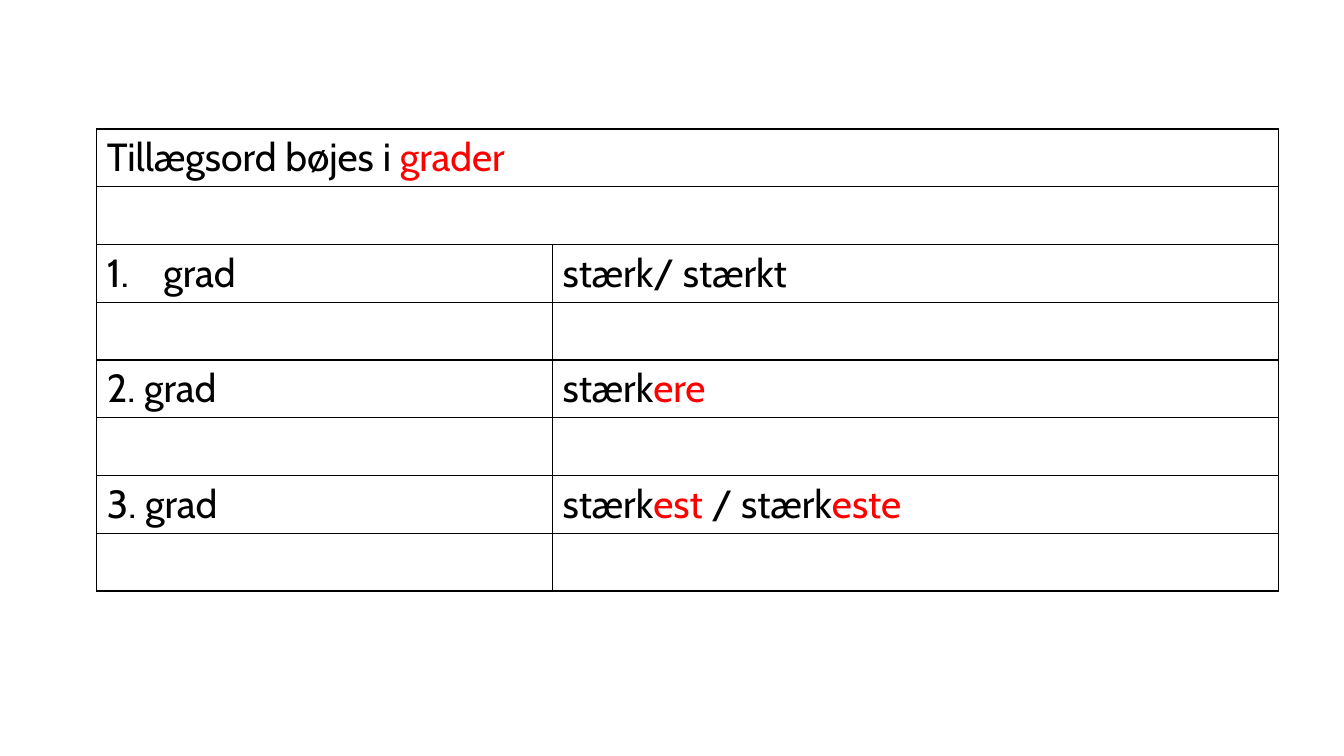
from dataclasses import dataclass

from lxml.etree import SubElement
from pptx import Presentation
from pptx.dml.color import RGBColor
from pptx.oxml.ns import qn
from pptx.util import Inches, Pt


@dataclass(frozen=True)
class Theme:
    font: str = "Cabin"
    size: int = 28
    text: str = "000000"
    ending: str = "FF0000"
    border: str = "000000"
    border_width: int = 1


THEME = Theme()
COLUMN_WIDTHS = (4.52, 7.2)
ROW_HEIGHT = 0.573
NUMBER_INDENT = 0.56

# Each cell is a list of text pieces; every second piece is highlighted.
ROWS = (
    (["Tillægsord bøjes i ", "grader"], []),
    ([], []),
    (["grad"], ["stærk/ stærkt"]),
    ([], []),
    (["2. grad"], ["stærk", "ere"]),
    ([], []),
    (["3. grad"], ["stærk", "est ", "/ stærk", "este"]),
    ([], []),
)
MERGED_ROWS = (0, 1)
NUMBERED_ROW = 2


def add_borders(cell):
    properties = cell._tc.get_or_add_tcPr()
    for side in ("a:lnL", "a:lnR", "a:lnT", "a:lnB"):
        line = SubElement(properties, qn(side), w=str(Pt(THEME.border_width)))
        fill = SubElement(line, qn("a:solidFill"))
        SubElement(fill, qn("a:srgbClr"), val=THEME.border)


def number_paragraph(paragraph):
    properties = paragraph._p.get_or_add_pPr()
    indent = Inches(NUMBER_INDENT)
    properties.set("marL", str(indent))
    properties.set("indent", str(-indent))
    SubElement(properties, qn("a:buFont"), typeface=THEME.font)
    SubElement(properties, qn("a:buAutoNum"), type="arabicPeriod")


def write_pieces(paragraph, pieces):
    """Write text runs that alternate between the text and ending colours."""
    for index, piece in enumerate(pieces):
        run = paragraph.add_run()
        run.text = piece
        formats = {"name": THEME.font, "size": Pt(THEME.size), "bold": False}
        for name, value in formats.items():
            setattr(run.font, name, value)
        color = THEME.ending if index % 2 else THEME.text
        run.font.color.rgb = RGBColor.from_string(color)


def add_degree_table(slide):
    table = slide.shapes.add_table(
        len(ROWS), len(COLUMN_WIDTHS), Inches(0.96), Inches(1.28),
        Inches(sum(COLUMN_WIDTHS)), Inches(ROW_HEIGHT * len(ROWS))).table
    table.first_row = False
    table.horz_banding = False
    for column, width in zip(table.columns, COLUMN_WIDTHS):
        column.width = Inches(width)
    for row, contents in zip(table.rows, ROWS):
        row.height = Inches(ROW_HEIGHT)
        for cell, pieces in zip(row.cells, contents):
            add_borders(cell)
            cell.fill.background()
            write_pieces(cell.text_frame.paragraphs[0], pieces)
    for index in MERGED_ROWS:
        table.cell(index, 0).merge(table.cell(index, 1))
    number_paragraph(table.cell(NUMBERED_ROW, 0).text_frame.paragraphs[0])


def main():
    presentation = Presentation()
    presentation.slide_width = Inches(13.33)
    presentation.slide_height = Inches(7.5)
    blank_layout = presentation.slide_layouts[6]
    slide = presentation.slides.add_slide(blank_layout)
    add_degree_table(slide)
    presentation.save("out.pptx")


if __name__ == "__main__":
    main()
